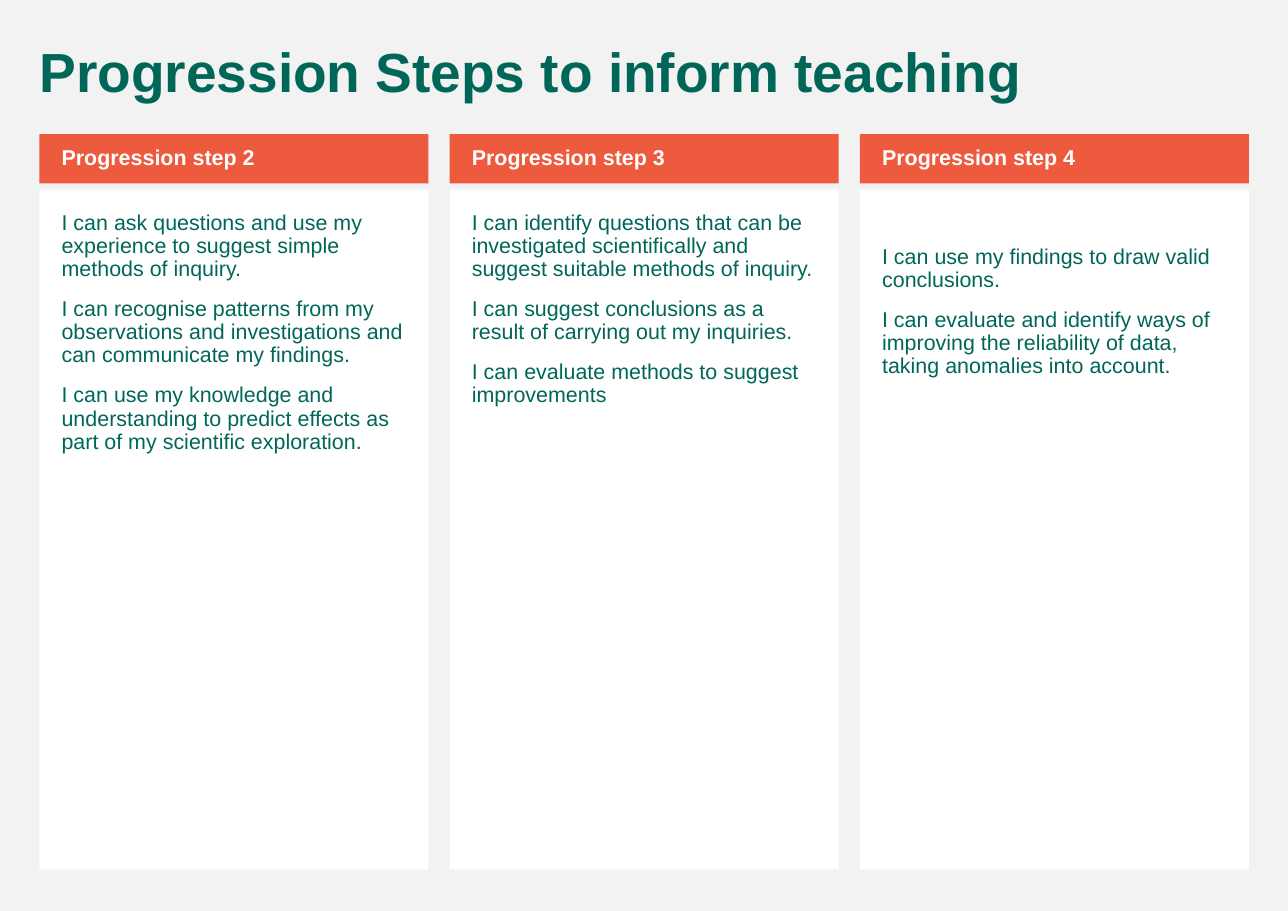
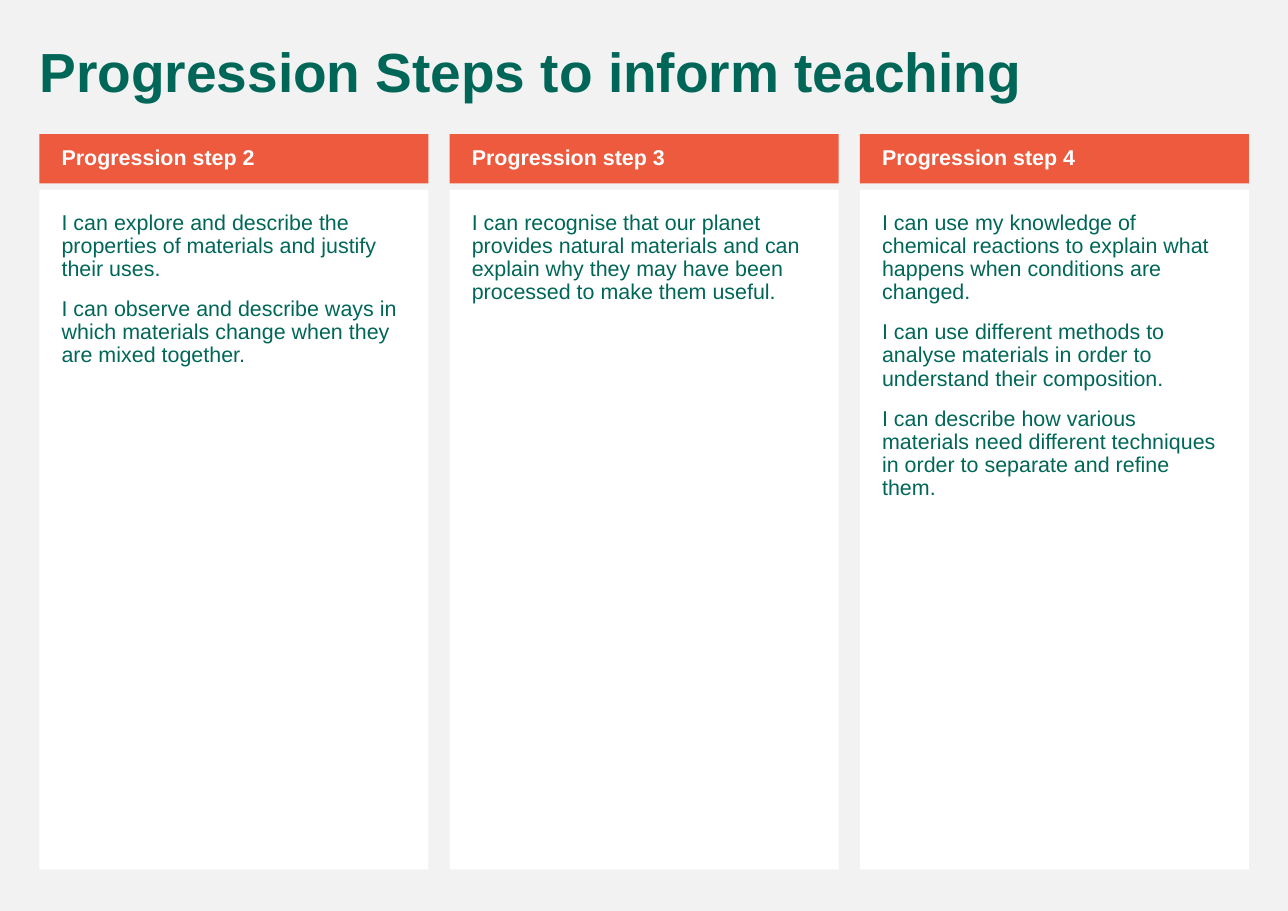
from copy import deepcopy

from pptx import Presentation
from pptx import util as u
from pptx.dml.color import RGBColor
from pptx.enum import text as t
from pptx.oxml import ns, xmlchemy as xc

# Content: one list of columns per slide
TITLE = "Progression Steps to inform teaching"
HEADS = ["Progression step 2", "Progression step 3", "Progression step 4"]
SLIDES = [
    [
        ["I can ask questions and use my experience to suggest simple methods of inquiry.",
         "I can recognise patterns from my observations and investigations and can communicate my findings.",
         "I can use my knowledge and understanding to predict effects as part of my scientific exploration."],
        ["I can identify questions that can be investigated scientifically and suggest suitable methods of inquiry.",
         "I can suggest conclusions as a result of carrying out my inquiries.",
         "I can evaluate methods to suggest improvements"],
        ["I can use my findings to draw valid conclusions.",
         "I can evaluate and identify ways of improving the reliability of data, taking anomalies into account."],
    ],
    [
        ["I can explore and describe the properties of materials and justify their uses.",
         "I can observe and describe ways in which materials change when they are mixed together."],
        ["I can recognise that our planet provides natural materials and can explain why they may have been processed to make them useful."],
        ["I can use my knowledge of chemical reactions to explain what happens when conditions are changed.",
         "I can use different methods to analyse materials in order to understand their composition.",
         "I can describe how various materials need different techniques in order to separate and refine them."],
    ],
]
DROPS = {(0, 2): 0.78}  # extra top inset by (slide, column), in cm

# Shared look
COLORS = {"page": "F2F2F2", "card": "FFFFFF", "band": "ED5A3E",
          "green": "006758", "white": "FFFFFF"}
LEFT, WIDTH, GAP = 0.91, 8.97, 0.49
STYLES = {
    "title": dict(size=36, bold=True, color="green", fill=None,
                  anchor=t.MSO_ANCHOR.TOP, inset=(0.25, 0.13, 0.25, 0.13)),
    "head": dict(size=14, bold=True, color="white", fill="band",
                 anchor=t.MSO_ANCHOR.MIDDLE, inset=(0.51, 0.13, 0.25, 0.13)),
    "card": dict(size=14, bold=False, color="green", fill="card",
                 anchor=t.MSO_ANCHOR.TOP, inset=(0.51, 0.51, 0.51, 0.51)),
}
PAIRS = [(1, 2), (3, 4), (13, 14)]  # head and card placeholder of each column


def rgb(name):
    return RGBColor.from_string(COLORS[name])


def assign(obj, vals):
    for key, val in vals.items():
        setattr(obj, key, val)


def widen(layout):
    """Add a third head and card to the two-column layout."""
    holds = {p.placeholder_format.idx: p for p in layout.placeholders}
    for src, new in zip(PAIRS[1], PAIRS[2]):
        elem = deepcopy(holds[src].element)
        elem.nvSpPr.cNvPr.set("id", str(100 + new))
        elem.nvSpPr.nvPr.find(ns.qn("p:ph")).set("idx", str(new))
        holds[PAIRS[1][1]].element.addnext(elem)


def write(shape, kind, box, lines, drop=0):
    """Place a placeholder and fill it with styled paragraphs."""
    look = STYLES[kind]
    assign(shape, dict(zip(("left", "top", "width", "height"), map(u.Cm, box))))
    if look["fill"]:
        shape.fill.solid()
        shape.fill.fore_color.rgb = rgb(look["fill"])
    frame = shape.text_frame
    left, top, right, low = look["inset"]
    assign(frame, dict(
        text="\n".join(lines), word_wrap=True, auto_size=t.MSO_AUTO_SIZE.NONE,
        vertical_anchor=look["anchor"], margin_left=u.Cm(left),
        margin_top=u.Cm(top + drop), margin_right=u.Cm(right),
        margin_bottom=u.Cm(low)))
    for para in frame.paragraphs:
        assign(para, dict(alignment=t.PP_ALIGN.LEFT, line_spacing=0.9,
                          space_before=u.Pt(11), space_after=u.Pt(0)))
        # No bullet and no hanging indent
        props = para._p.get_or_add_pPr()
        props.set("marL", "0")
        props.set("indent", "0")
        props.append(xc.OxmlElement("a:buNone"))
        for run in para.runs:
            assign(run.font, dict(name="Arial", size=u.Pt(look["size"]),
                                  bold=look["bold"]))
            run.font.color.rgb = rgb(look["color"])


def main():
    prs = Presentation()
    assign(prs, dict(slide_width=u.Cm(29.7), slide_height=u.Cm(21)))
    back = prs.slide_master.background.fill
    back.solid()
    back.fore_color.rgb = rgb("page")
    layout = prs.slide_layouts.get_by_name("Comparison")
    widen(layout)

    for num, cols in enumerate(SLIDES):
        slide = prs.slides.add_slide(layout)
        write(slide.shapes.title, "title", (0.66, 0.91, 28.14, 1.65), [TITLE])
        holds = {p.placeholder_format.idx: p for p in slide.placeholders}
        for col, (head, lines, pair) in enumerate(zip(HEADS, cols, PAIRS)):
            x = LEFT + col * (WIDTH + GAP)
            write(holds[pair[0]], "head", (x, 3.09, WIDTH, 1.14), [head])
            write(holds[pair[1]], "card", (x, 4.37, WIDTH, 15.67), lines,
                  DROPS.get((num, col), 0))
    prs.save("out.pptx")


if __name__ == "__main__":
    main()
